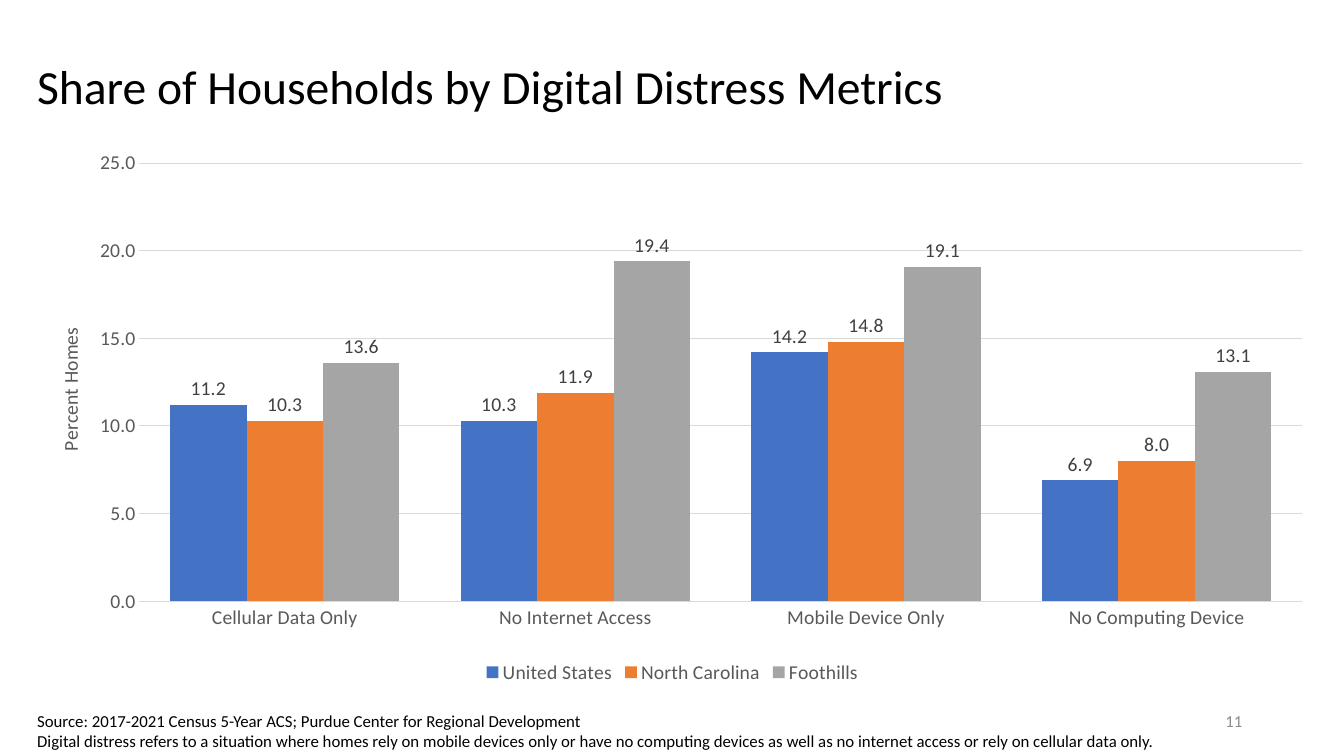
from lxml import etree
from pptx import Presentation
from pptx.chart.data import CategoryChartData
from pptx.dml.color import RGBColor
from pptx.enum.chart import XL_CHART_TYPE, XL_LABEL_POSITION, XL_LEGEND_POSITION, XL_TICK_MARK
from pptx.enum.text import MSO_ANCHOR, MSO_AUTO_SIZE, PP_ALIGN
from pptx.oxml.ns import qn
from pptx.util import Inches, Pt

COLUMNS = XL_CHART_TYPE.COLUMN_CLUSTERED
OUTSIDE_END = XL_LABEL_POSITION.OUTSIDE_END
LEGEND_BOTTOM = XL_LEGEND_POSITION.BOTTOM
NO_TICK = XL_TICK_MARK.NONE
MIDDLE, TOP = MSO_ANCHOR.MIDDLE, MSO_ANCHOR.TOP
LEFT, RIGHT = PP_ALIGN.LEFT, PP_ALIGN.RIGHT
GROW = MSO_AUTO_SIZE.SHAPE_TO_FIT_TEXT

BLACK = RGBColor(0x00, 0x00, 0x00)
AXIS_GREY = RGBColor(0x59, 0x59, 0x59)
LABEL_GREY = RGBColor(0x40, 0x40, 0x40)
NUMBER_GREY = RGBColor(0x8C, 0x8C, 0x8C)
GRID_GREY = RGBColor(0xD9, 0xD9, 0xD9)
BLUE = RGBColor(0x44, 0x72, 0xC4)
ORANGE = RGBColor(0xED, 0x7D, 0x31)
GREY = RGBColor(0xA5, 0xA5, 0xA5)

FONT = "Calibri"
ONE_DECIMAL = "#,##0.0"
WIDTH, HEIGHT = Inches(13.33), Inches(7.5)
MARGIN = Inches(0.27)

METRICS = ["Cellular Data Only", "No Internet Access", "Mobile Device Only", "No Computing Device"]
REGIONS = [
    ("United States", BLUE, (11.2, 10.3, 14.2, 6.9)),
    ("North Carolina", ORANGE, (10.3, 11.9, 14.8, 8.0)),
    ("Foothills", GREY, (13.6, 19.4, 19.1, 13.1)),
]
SOURCE_NOTE = (
    "Source: 2017-2021 Census 5-Year ACS; Purdue Center for Regional Development\v"
    "Digital distress refers to a situation where homes rely on mobile devices only or have "
    "no computing devices as well as no internet access or rely on cellular data only."
)


def style_font(font, size, color):
    """Apply the slide's typeface with a size and a colour."""
    font.name, font.size, font.bold = FONT, Pt(size), False
    font.color.rgb = color


def style_line(line, color):
    """Draw a thin line in the given colour."""
    line.color.rgb = color
    line.width = Pt(0.75)


def add_text(slide, box, text, size, color, anchor=MIDDLE, align=LEFT):
    """Place one paragraph of text in a box and return its frame."""
    frame = slide.shapes.add_textbox(*box).text_frame
    frame.word_wrap = True
    frame.vertical_anchor = anchor
    frame.text = text
    paragraph = frame.paragraphs[0]
    paragraph.alignment = align
    style_font(paragraph.font, size, color)
    return frame


def set_layout(parent, index, **settings):
    """Give a chart part a manual layout as shares of the chart."""
    for automatic in parent.findall(qn("c:layout")):
        parent.remove(automatic)
    layout = etree.Element(qn("c:layout"))
    manual = etree.SubElement(layout, qn("c:manualLayout"))
    for tag, value in settings.items():
        etree.SubElement(manual, qn(f"c:{tag}")).set("val", str(value))
    parent.insert(index, layout)


def style_axes(chart):
    """Format the category axis, the value axis and its title."""
    metric_axis, percent_axis = chart.category_axis, chart.value_axis
    for axis in (metric_axis, percent_axis):
        axis.major_tick_mark = axis.minor_tick_mark = NO_TICK
        style_font(axis.tick_labels.font, 14, AXIS_GREY)
    style_line(metric_axis.format.line, GRID_GREY)
    percent_axis.format.line.fill.background()
    percent_axis.minimum_scale, percent_axis.maximum_scale = 0, 25
    percent_axis.major_unit = 5
    percent_axis.has_major_gridlines = True
    style_line(percent_axis.major_gridlines.format.line, GRID_GREY)
    percent_axis.tick_labels.number_format = ONE_DECIMAL
    percent_axis.tick_labels.number_format_is_linked = False
    title_frame = percent_axis.axis_title.text_frame
    title_frame.text = "Percent Homes"
    style_font(title_frame.paragraphs[0].font, 14, AXIS_GREY)


def add_distress_chart(slide, box):
    """Place the clustered columns of household shares in a box."""
    data = CategoryChartData(number_format=ONE_DECIMAL)
    data.categories = METRICS
    for region, _, shares in REGIONS:
        data.add_series(region, shares)
    chart = slide.shapes.add_chart(COLUMNS, *box, data).chart
    style_font(chart.font, 14, BLACK)
    chart.has_title = False
    chart.has_legend = True
    chart.legend.position = LEGEND_BOTTOM
    chart.legend.include_in_layout = False
    style_font(chart.legend.font, 14, AXIS_GREY)
    style_axes(chart)

    columns = chart.plots[0]
    columns.gap_width, columns.overlap = 80, 0
    columns.vary_by_categories = False
    for series, (_, color, _) in zip(columns.series, REGIONS):
        series.format.fill.solid()
        series.format.fill.fore_color.rgb = color
        labels = series.data_labels
        labels.show_value = True
        labels.position = OUTSIDE_END
        labels.number_format = ONE_DECIMAL
        labels.number_format_is_linked = False
        style_font(labels.font, 14, LABEL_GREY)

    plot_area = chart._chartSpace.find(f".//{qn('c:plotArea')}")
    set_layout(plot_area, 0, layoutTarget="inner", xMode="edge", yMode="edge",
               x=0.087, y=0.035, w=0.901, h=0.805)
    axis_title = plot_area.find(f"{qn('c:valAx')}/{qn('c:title')}")
    set_layout(axis_title, 1, xMode="edge", yMode="edge", x=0.02, y=0.33)


def add_footer(slide, box):
    """Place the slide number and the source note in a bottom band."""
    left, top, width, height = box
    number_box = (left + int(width * 0.715), top, Inches(3), int(height * 0.73))
    add_text(slide, number_box, "11", 12, NUMBER_GREY, align=RIGHT)
    note_box = (left, top + Inches(0.05), int(width * 0.89), height - Inches(0.05))
    note = add_text(slide, note_box, SOURCE_NOTE, 12, BLACK, anchor=TOP)
    note.word_wrap = False
    note.auto_size = GROW


def build_slide(presentation):
    """Stack the title, the chart and the footer on a blank slide."""
    slide = presentation.slides.add_slide(presentation.slide_layouts[6])
    content_width = int(WIDTH * 0.96)
    title_box = (MARGIN, Inches(0.34), content_width, Inches(1.09))
    title = add_text(slide, title_box, "Share of Households by Digital Distress Metrics", 34, BLACK)
    title.paragraphs[0].line_spacing = 0.9
    add_distress_chart(slide, (MARGIN, Inches(1.43), content_width, int(HEIGHT * 0.72)))
    footer_top = Inches(6.95)
    add_footer(slide, (MARGIN, footer_top, content_width, HEIGHT - footer_top))


def main():
    """Create the presentation and save it."""
    presentation = Presentation()
    presentation.slide_width, presentation.slide_height = WIDTH, HEIGHT
    build_slide(presentation)
    presentation.save("out.pptx")


if __name__ == "__main__":
    main()
